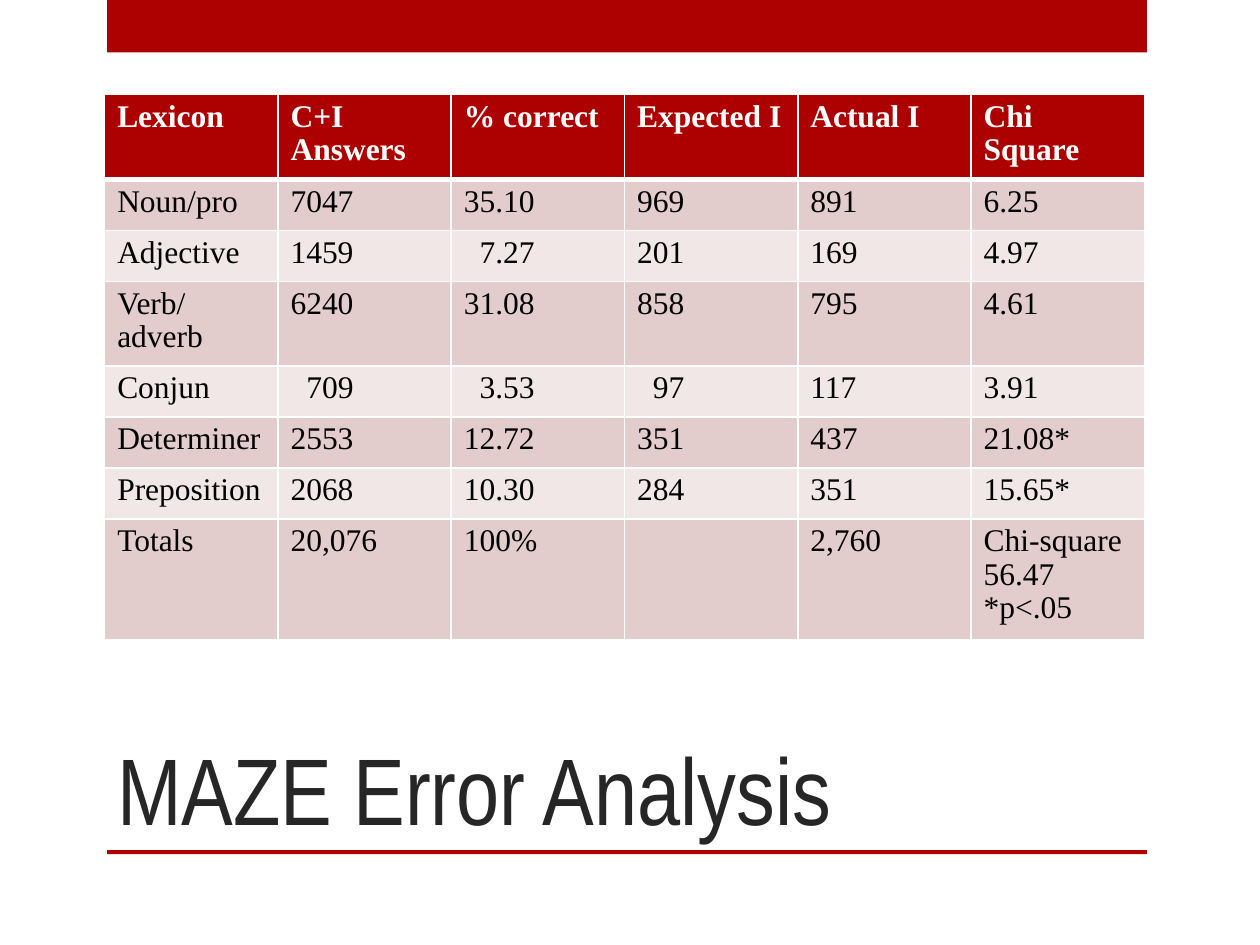
from dataclasses import dataclass

from lxml import etree
from pptx import Presentation
from pptx.dml.color import RGBColor
from pptx.enum.shapes import MSO_SHAPE
from pptx.enum.text import MSO_ANCHOR
from pptx.oxml.ns import qn
from pptx.slide import Slide
from pptx.table import _Cell
from pptx.text.text import TextFrame
from pptx.util import Cm, Pt

RECTANGLE = MSO_SHAPE.RECTANGLE
BOTTOM = MSO_ANCHOR.BOTTOM

RED = RGBColor(0xAD, 0x01, 0x01)
DARK_BAND = RGBColor(0xE3, 0xCC, 0xCC)
LIGHT_BAND = RGBColor(0xF1, 0xE7, 0xE7)
WHITE = RGBColor(0xFF, 0xFF, 0xFF)
BLACK = RGBColor(0x00, 0x00, 0x00)
CHARCOAL = RGBColor(0x26, 0x26, 0x26)

TITLE_FONT = "Arial Narrow"
TABLE_FONT = "Times New Roman"
ROW_HEIGHT = Cm(1.03)
DIGIT_WIDTH = Pt(9)

HEADER = ("Lexicon", "C+I Answers", "% correct", "Expected I", "Actual I", "Chi Square")
RESULTS = (
    ("Noun/pro", "7047", "35.10", "969", "891", "6.25"),
    ("Adjective", "1459", "7.27", "201", "169", "4.97"),
    ("Verb/\nadverb", "6240", "31.08", "858", "795", "4.61"),
    ("Conjun", "709", "3.53", "97", "117", "3.91"),
    ("Determiner", "2553", "12.72", "351", "437", "21.08*"),
    ("Preposition", "2068", "10.30", "284", "351", "15.65*"),
    ("Totals", "20,076", "100%", "", "2,760", "Chi-square\n56.47\n*p<.05"),
)
INDENTED_VALUES = {"7.27", "709", "3.53", "97"}


@dataclass(frozen=True)
class Bar:
    top: float
    height: float


BARS = (Bar(0, 1.06), Bar(17.14, 0.08))


def write_text(
    text_frame: TextFrame,
    text: str,
    *,
    font: str,
    size: float,
    color: RGBColor,
    bold: bool = False,
    indent: int = 0,
    line_spacing: float = 1.0,
) -> None:
    text_frame.text = text
    for paragraph in text_frame.paragraphs:
        paragraph.line_spacing = line_spacing
        paragraph.font.name = font
        paragraph.font.size = Pt(size)
        paragraph.font.bold = bold
        paragraph.font.color.rgb = color
        if indent:
            paragraph._p.get_or_add_pPr().set("marL", str(int(indent)))


def draw_bar(slide: Slide, bar: Bar) -> None:
    shape = slide.shapes.add_shape(
        RECTANGLE, Cm(2.16), Cm(bar.top), Cm(20.96), Cm(bar.height)
    )
    shape.shadow.inherit = False
    shape.fill.solid()
    shape.fill.fore_color.rgb = RED
    shape.line.fill.background()


def draw_title(slide: Slide) -> None:
    title = slide.shapes.add_textbox(Cm(2.11), Cm(12.7), Cm(18.85), Cm(4.45))
    title.text_frame.word_wrap = True
    title.text_frame.vertical_anchor = BOTTOM
    write_text(
        title.text_frame, "MAZE Error Analysis", font=TITLE_FONT, size=54, color=CHARCOAL
    )


def set_borders(cell: _Cell, top: int, bottom: int) -> None:
    properties = cell._tc.get_or_add_tcPr()
    for side, width in (("lnL", 1), ("lnR", 1), ("lnT", top), ("lnB", bottom)):
        line = etree.SubElement(properties, qn(f"a:{side}"), w=str(int(Pt(width))))
        fill = etree.SubElement(line, qn("a:solidFill"))
        etree.SubElement(fill, qn("a:srgbClr"), val=str(WHITE))


def draw_table(slide: Slide) -> None:
    rows = (HEADER, *RESULTS)
    table = slide.shapes.add_table(
        len(rows), len(HEADER), Cm(2.11), Cm(1.91), Cm(20.96), ROW_HEIGHT * len(rows)
    ).table
    for row_index, values in enumerate(rows):
        is_header = row_index == 0
        band = RED if is_header else DARK_BAND if row_index % 2 else LIGHT_BAND
        for column_index, value in enumerate(values):
            cell = table.cell(row_index, column_index)
            set_borders(
                cell, top=3 if row_index == 1 else 1, bottom=3 if is_header else 1
            )
            cell.fill.solid()
            cell.fill.fore_color.rgb = band
            write_text(
                cell.text_frame,
                value,
                font=TABLE_FONT,
                size=18,
                color=WHITE if is_header else BLACK,
                bold=is_header,
                indent=DIGIT_WIDTH if value in INDENTED_VALUES else 0,
                line_spacing=0.95,
            )


def main() -> None:
    presentation = Presentation()
    presentation.slide_width = Cm(25.4)
    presentation.slide_height = Cm(19.05)
    slide = presentation.slides.add_slide(presentation.slide_layouts[6])
    for bar in BARS:
        draw_bar(slide, bar)
    draw_title(slide)
    draw_table(slide)
    presentation.save("out.pptx")


if __name__ == "__main__":
    main()
